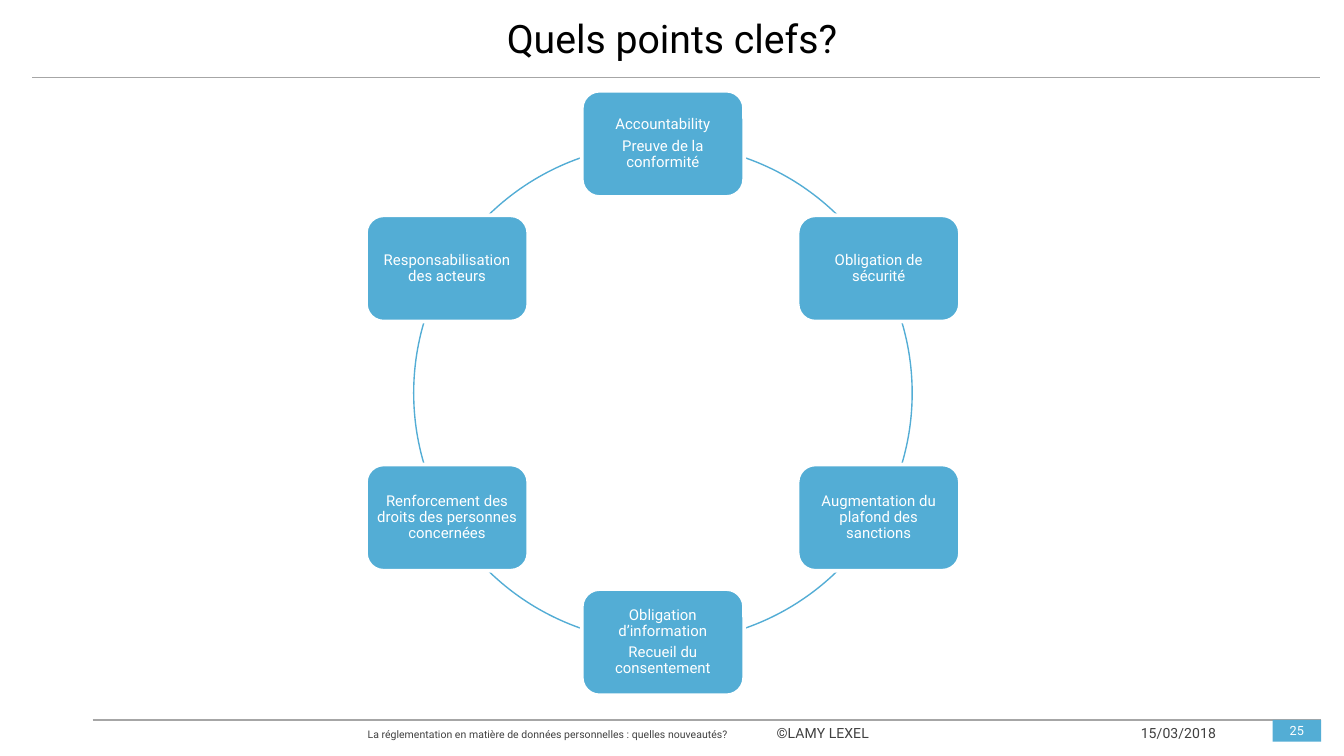
from math import cos, radians, sin

from lxml.etree import SubElement
from pptx import Presentation
from pptx.dml.color import RGBColor
from pptx.enum.shapes import MSO_CONNECTOR, MSO_SHAPE
from pptx.enum.text import MSO_ANCHOR as Anchor, PP_ALIGN as Align
from pptx.oxml.ns import qn
from pptx.util import Cm, Pt

BLUE, GREY, DARK, WHITE, BLACK = "53ADD5", "A6A6A6", "404040", "FFFFFF", "000000"
FONT = "Roboto"

# Ring of key points, in centimetres
CENTER_X, CENTER_Y, RADIUS = 12.53, 7.43, 4.71
BOX_WIDTH, BOX_HEIGHT = 3.07, 2.01

# Clockwise from the top; each entry lists the paragraphs of one box
KEY_POINTS = [
    ["Accountability", "Preuve de la conformité"],
    ["Obligation de sécurité"],
    ["Augmentation du plafond des sanctions"],
    ["Obligation d’information", "Recueil du consentement"],
    ["Renforcement des droits des personnes concernées"],
    ["Responsabilisation des acteurs"],
]

# Visible arcs between the boxes, in degrees clockwise from the right
ARCS = [(289.3, 314.3), (343.5, 16.5), (45.7, 70.7),
        (109.3, 134.3), (163.5, 196.5), (225.7, 250.7)]


def color(value):
    return RGBColor.from_string(value)


def write_text(shape, paragraphs, size, font_color, align=Align.CENTER,
               anchor=Anchor.MIDDLE, margins=(0, 0, 0, 0),
               line_spacing=None, space_after=0):
    frame = shape.text_frame
    frame.word_wrap = True
    frame.vertical_anchor = anchor
    (frame.margin_left, frame.margin_top,
     frame.margin_right, frame.margin_bottom) = map(Cm, margins)
    for index, text in enumerate(paragraphs):
        paragraph = frame.add_paragraph() if index else frame.paragraphs[0]
        paragraph.alignment = align
        paragraph.line_spacing = line_spacing
        paragraph.space_before = Pt(0)
        paragraph.space_after = Pt(space_after)
        run = paragraph.add_run()
        run.text = text
        run.font.name = FONT
        run.font.size = Pt(size)
        run.font.color.rgb = color(font_color)


def add_box(slide, kind, left, top, width, height, border=None):
    shape = slide.shapes.add_shape(kind, Cm(left), Cm(top), Cm(width), Cm(height))
    shape.shadow.inherit = False
    shape.fill.solid()
    shape.fill.fore_color.rgb = color(BLUE)
    if border:
        shape.line.color.rgb = color(border)
        shape.line.width = Pt(2)
    else:
        shape.line.fill.background()
    return shape


def add_rule(slide, left, right, y):
    rule = slide.shapes.add_connector(
        MSO_CONNECTOR.STRAIGHT, Cm(left), Cm(y), Cm(right), Cm(y))
    rule.line.color.rgb = color(GREY)
    rule.line.width = Pt(0.75)
    SubElement(rule._element.spPr, qn("a:effectLst"))


def add_footer(slide, text, left, top, width, height, size, align):
    box = slide.shapes.add_textbox(Cm(left), Cm(top), Cm(width), Cm(height))
    write_text(box, [text], size, DARK, align, Anchor.BOTTOM,
               margins=(0.1, 0.13, 0.18, 0.1))


def add_arc(slide, start, end):
    arc = slide.shapes.add_shape(
        MSO_SHAPE.ARC, Cm(CENTER_X - RADIUS), Cm(CENTER_Y - RADIUS),
        Cm(2 * RADIUS), Cm(2 * RADIUS))
    arc.shadow.inherit = False
    arc.fill.background()
    arc.line.color.rgb = color(BLUE)
    arc.line.width = Pt(0.75)
    # Angles are stored in 60000ths of a degree, adjustments in 100000ths
    arc.adjustments[0] = start * 0.6
    arc.adjustments[1] = end * 0.6


def add_key_point(slide, index, paragraphs):
    angle = radians(index * 360 / len(KEY_POINTS) - 90)
    left = CENTER_X + RADIUS * cos(angle) - BOX_WIDTH / 2
    top = CENTER_Y + RADIUS * sin(angle) - BOX_HEIGHT / 2
    box = add_box(slide, MSO_SHAPE.ROUNDED_RECTANGLE, left, top,
                  BOX_WIDTH, BOX_HEIGHT, border=WHITE)
    write_text(box, paragraphs, 8, WHITE, margins=(0.07,) * 4,
               line_spacing=0.9, space_after=2.8)


def set_title(slide, text):
    title = slide.shapes.title
    title.left, title.top, title.width, title.height = map(
        Cm, (0.15, 0.1, 25.1, 1.24))
    write_text(title, [text], 21, BLACK, margins=(0.25, 0.13, 0.25, 0.13),
               space_after=2.2)


def main():
    presentation = Presentation()
    presentation.slide_width, presentation.slide_height = Cm(25.4), Cm(14.29)
    slide = presentation.slides.add_slide(presentation.slide_layouts[5])

    # Title and rules
    set_title(slide, "Quels points clefs?")
    add_rule(slide, 0.61, 24.94, 1.47)
    add_rule(slide, 1.75, 24.97, 13.61)

    # Footer
    add_footer(slide, "La réglementation en matière de données personnelles : "
               "quelles nouveautés?", 1.7, 13.64, 12.22, 0.46, 5.6, Align.RIGHT)
    add_footer(slide, "©LAMY LEXEL", 14.17, 13.56, 2.84, 0.56, 7.5, Align.CENTER)
    add_footer(slide, "15/03/2018", 20.85, 13.56, 2.31, 0.56, 7.5, Align.RIGHT)
    number = add_box(slide, MSO_SHAPE.RECTANGLE, 24.05, 13.61, 0.92, 0.41)
    write_text(number, ["25"], 6.8, WHITE)

    # Ring of key points
    for start, end in ARCS:
        add_arc(slide, start, end)
    for index, paragraphs in enumerate(KEY_POINTS):
        add_key_point(slide, index, paragraphs)

    presentation.save("out.pptx")


if __name__ == "__main__":
    main()
